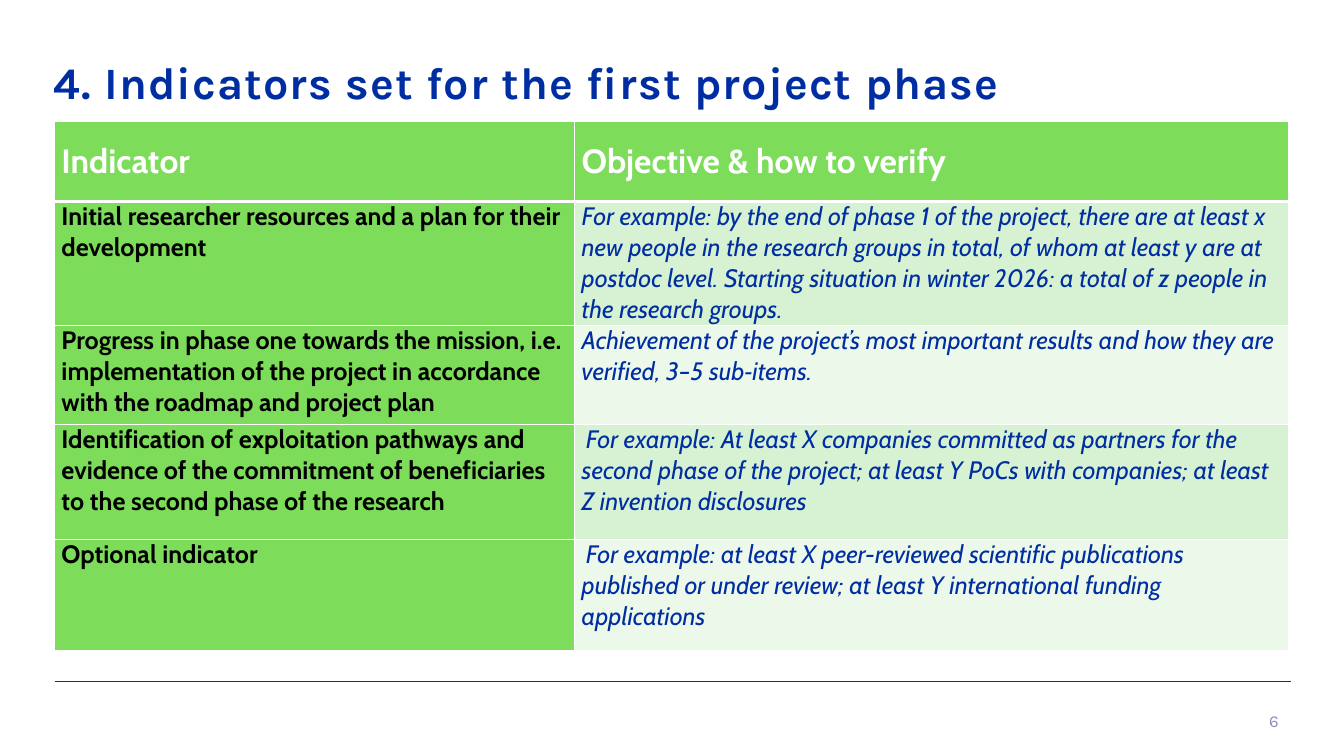
from lxml import etree
from pptx import Presentation
from pptx.dml.color import RGBColor
from pptx.enum.shapes import MSO_CONNECTOR
from pptx.enum.text import MSO_ANCHOR, MSO_AUTO_SIZE, PP_ALIGN
from pptx.oxml.ns import qn
from pptx.util import Inches, Pt

LEFT, RIGHT = PP_ALIGN.LEFT, PP_ALIGN.RIGHT
MIDDLE, TOP = MSO_ANCHOR.MIDDLE, MSO_ANCHOR.TOP
NO_FIT = MSO_AUTO_SIZE.NONE
STRAIGHT = MSO_CONNECTOR.STRAIGHT

NAVY = RGBColor(0x00, 0x2E, 0xA2)
GREEN = RGBColor(0x7D, 0xDC, 0x5A)
MINT = RGBColor(0xD7, 0xF2, 0xD2)
PALE = RGBColor(0xEC, 0xF9, 0xEA)
GREY = RGBColor(0x8C, 0x8F, 0xBF)
BLACK = RGBColor(0x00, 0x00, 0x00)
WHITE = RGBColor(0xFF, 0xFF, 0xFF)

COLS = (5.16, 7.08)
ROWS = (0.8, 1.23, 0.98, 1.14, 1.1)
HEADS = ("Indicator", "Objective & how to verify")
ITEMS = (
    ("Initial researcher resources and a plan for their development",
     "For example: by the end of phase 1 of the project, there are at least x "
     "new people in the research groups in total, of whom at least y are at "
     "postdoc level. Starting situation in winter 2026: a total of z people in "
     "the research groups.", 0),
    ("Progress in phase one towards the mission, i.e. implementation of the "
     "project in accordance with the roadmap and project plan",
     "Achievement of the project’s most important results and how they are "
     "verified, 3–5 sub‑items.", 0),
    ("Identification of exploitation pathways and evidence of the commitment "
     "of beneficiaries to the second phase of the research",
     "For example: At least X companies committed as partners for the second "
     "phase of the project; at least Y PoCs with companies; at least Z "
     "invention disclosures", 0.04),
    ("Optional indicator",
     "For example: at least X peer-reviewed scientific publications published "
     "or under review; at least Y international funding applications", 0.04),
)


def style(para, size, color, face, bold=False, slant=False):
    """Format every run of a paragraph."""
    for run in para.runs:
        font = run.font
        font.name, font.size = face, Pt(size)
        font.bold, font.italic = bold, slant
        font.color.rgb = color


def edge(cell, base):
    """Draw white borders, with the bottom one in the given width."""
    props = cell._tc.get_or_add_tcPr()
    for tag, width in (("lnL", 1), ("lnR", 1), ("lnT", 1), ("lnB", base)):
        line = etree.SubElement(props, qn("a:" + tag), w=str(Pt(width)))
        fill = etree.SubElement(line, qn("a:solidFill"))
        etree.SubElement(fill, qn("a:srgbClr"), val=str(WHITE))


def fill_cell(cell, text, fill, anchor=TOP, base=1):
    """Fill one cell and return its paragraph."""
    edge(cell, base)
    cell.fill.solid()
    cell.fill.fore_color.rgb = fill
    cell.margin_left = cell.margin_right = Inches(0.07)
    cell.margin_top = cell.margin_bottom = 0
    cell.vertical_anchor = anchor
    cell.text_frame.text = text
    return cell.text_frame.paragraphs[0]


def add_title(slide, box, text):
    """Place the slide title in its box."""
    title = slide.shapes.title
    title.left, title.top, title.width, title.height = map(Inches, box)
    frame = title.text_frame
    frame.text = text
    frame.auto_size, frame.vertical_anchor = NO_FIT, MIDDLE
    para = frame.paragraphs[0]
    para.alignment, para.line_spacing = LEFT, 0.9
    style(para, 32, NAVY, "Karla", bold=True)
    para.runs[0]._r.get_or_add_rPr().set("spc", "80")


def add_grid(slide, box):
    """Place the table of indicators in its box."""
    count = len(ITEMS) + 1
    table = slide.shapes.add_table(count, 2, *map(Inches, box)).table
    for col, width in zip(table.columns, COLS):
        col.width = Inches(width)
    for row, height in zip(table.rows, ROWS):
        row.height = Inches(height)
    for col, head in enumerate(HEADS):
        para = fill_cell(table.cell(0, col), head, GREEN, MIDDLE, 3)
        style(para, 24, WHITE, "Cabin", bold=True)
    for row, (name, goal, indent) in enumerate(ITEMS, 1):
        para = fill_cell(table.cell(row, 0), name, GREEN)
        style(para, 18, BLACK, "Cabin", bold=True)
        para = fill_cell(table.cell(row, 1), goal, MINT if row % 2 else PALE)
        para._p.get_or_add_pPr().set("indent", str(Inches(indent)))
        style(para, 18, NAVY, "Cabin", slant=True)


def add_foot(slide, box, number):
    """Place the rule and the page number in the footer box."""
    left, top, width, height = box
    ends = (left, top, left + width, top)
    rule = slide.shapes.add_connector(STRAIGHT, *map(Inches, ends))
    rule.line.color.rgb, rule.line.width = NAVY, Pt(1)
    etree.SubElement(rule._element.spPr, qn("a:effectLst"))
    spot = (left + width - 1.76, top + 0.19, 1.74, height - 0.19)
    page = slide.shapes.add_textbox(*map(Inches, spot))
    frame = page.text_frame
    frame.word_wrap, frame.vertical_anchor = True, MIDDLE
    frame.text = number
    para = frame.paragraphs[0]
    para.alignment = RIGHT
    style(para, 12, GREY, "Karla")


def main():
    """Build and save the slide."""
    deck = Presentation()
    deck.slide_width, deck.slide_height = Inches(13.33), Inches(7.5)
    slide = deck.slides.add_slide(deck.slide_layouts[5])
    add_title(slide, (0.43, 0.12, 12.25, 1.45),
              "4. Indicators set for the first project phase")
    add_grid(slide, (0.54, 1.2, sum(COLS), sum(ROWS)))
    add_foot(slide, (0.55, 6.76, 12.25, 0.59), "6")
    deck.save("out.pptx")


if __name__ == "__main__":
    main()
